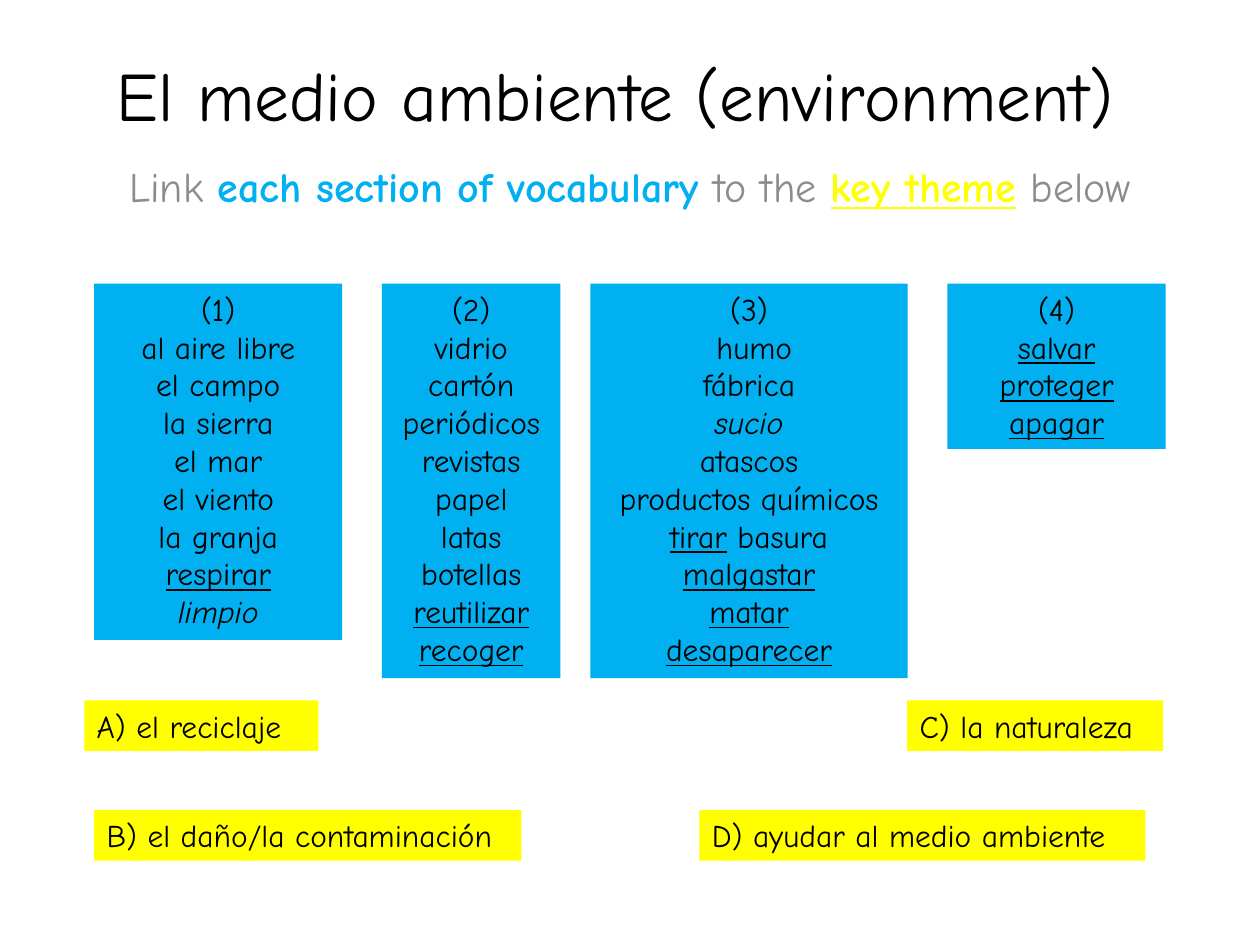
from pptx import Presentation
from pptx.dml.color import RGBColor
from pptx.enum.shapes import MSO_SHAPE as Shape
from pptx.enum.text import MSO_ANCHOR as Anchor, PP_ALIGN as Align
from pptx.util import Cm, Pt

FONT = "Comic Neue"
BLACK = RGBColor(0x00, 0x00, 0x00)
GREY = RGBColor(0x8C, 0x8C, 0x8C)
BLUE = RGBColor(0x00, 0xB0, 0xF0)
YELLOW = RGBColor(0xFF, 0xFF, 0x00)

LINE_HEIGHT = 0.77
BOX_PADDING = 0.25
VOCABULARY_TOP = 5.72
THEME_HEIGHT = 1.02

VERB = {"underline": True}
ADJECTIVE = {"italic": True}

VOCABULARY = [
    (1.9, 5, 9, [
        "(1)", "al aire libre", "el campo", "la sierra", "el mar", "el viento",
        "la granja", [("respirar", VERB)], [("limpio", ADJECTIVE)]]),
    (7.7, 3.6, 10, [
        "(2)", "vidrio", "cartón", "periódicos revistas", "papel", "latas",
        "botellas", [("reutilizar", VERB)], [("recoger", VERB)]]),
    (11.9, 6.4, 10, [
        "(3)", " humo", "fábrica", [("sucio", ADJECTIVE)], "atascos",
        "productos químicos", [("tirar", VERB), (" basura", {})],
        [("malgastar", VERB)], [("matar", VERB)], [("desaparecer", VERB)]]),
    (19.1, 4.4, 4, [
        "(4)", [("salvar", VERB)], [("proteger", VERB)], [("apagar", VERB)]]),
]

THEMES = [
    (1.7, 14.12, 4.72, "A) el reciclaje"),
    (18.29, 14.12, 5.16, "C) la naturaleza"),
    (1.9, 16.33, 8.61, "B) el daño/la contaminación"),
    (14.1, 16.33, 8.99, "D) ayudar al medio ambiente"),
]

INSTRUCTION = [
    ("Link ", {}),
    ("each section of vocabulary ", {"color": BLUE, "bold": True}),
    ("to the ", {}),
    ("key theme", {"color": YELLOW, "bold": True, "underline": True}),
    (" ", {"color": YELLOW, "bold": True}),
    ("below", {}),
]


def add_run(paragraph, text, size, color=BLACK, bold=False, italic=False, underline=False):
    """Append one formatted run to a paragraph."""
    run = paragraph.add_run()
    run.text = text
    font = run.font
    font.name, font.size = FONT, Pt(size)
    font.bold, font.italic, font.underline = bold, italic, underline
    font.color.rgb = color


def fill_lines(text_frame, lines, alignment):
    """Write each line, plain or as styled pieces, as its own paragraph."""
    text_frame.word_wrap = True
    for index, line in enumerate(lines):
        paragraph = text_frame.add_paragraph() if index else text_frame.paragraphs[0]
        paragraph.alignment = alignment
        pieces = [(line, {})] if isinstance(line, str) else line
        for text, style in pieces:
            add_run(paragraph, text, 18, **style)


def add_box(slide, left, top, width, height, color, lines, alignment):
    """Add a flat coloured rectangle holding lines of text."""
    shape = slide.shapes.add_shape(
        Shape.RECTANGLE, Cm(left), Cm(top), Cm(width), Cm(height))
    shape.shadow.inherit = False
    shape.fill.solid()
    shape.fill.fore_color.rgb = color
    shape.line.fill.background()
    shape.text_frame.vertical_anchor = Anchor.TOP
    fill_lines(shape.text_frame, lines, alignment)


def add_title(slide, text):
    """Place and format the slide title."""
    title = slide.shapes.title
    title.left, title.top, title.width, title.height = Cm(0.9), Cm(0.9), Cm(23), Cm(2)
    title.text_frame.vertical_anchor = Anchor.MIDDLE
    paragraph = title.text_frame.paragraphs[0]
    paragraph.alignment = Align.CENTER
    add_run(paragraph, text, 39.6)


def add_instruction(slide, pieces):
    """Add the centred instruction under the title."""
    box = slide.shapes.add_textbox(Cm(0.9), Cm(3.12), Cm(23.6), Cm(1.8))
    box.text_frame.word_wrap = True
    paragraph = box.text_frame.paragraphs[0]
    paragraph.alignment = Align.CENTER
    paragraph.space_before = Pt(4.8)
    for text, style in pieces:
        add_run(paragraph, text, 24, **{"color": GREY, **style})


def main():
    """Build the vocabulary slide and save it."""
    presentation = Presentation()
    presentation.slide_width, presentation.slide_height = Cm(25.4), Cm(19.05)
    slide = presentation.slides.add_slide(presentation.slide_layouts[5])
    add_title(slide, "El medio ambiente (environment)")
    add_instruction(slide, INSTRUCTION)
    for left, width, line_count, lines in VOCABULARY:
        height = BOX_PADDING + LINE_HEIGHT * line_count
        add_box(slide, left, VOCABULARY_TOP, width, height, BLUE, lines, Align.CENTER)
    for left, top, width, text in THEMES:
        add_box(slide, left, top, width, THEME_HEIGHT, YELLOW, [text], Align.LEFT)
    presentation.save("out.pptx")


if __name__ == "__main__":
    main()
